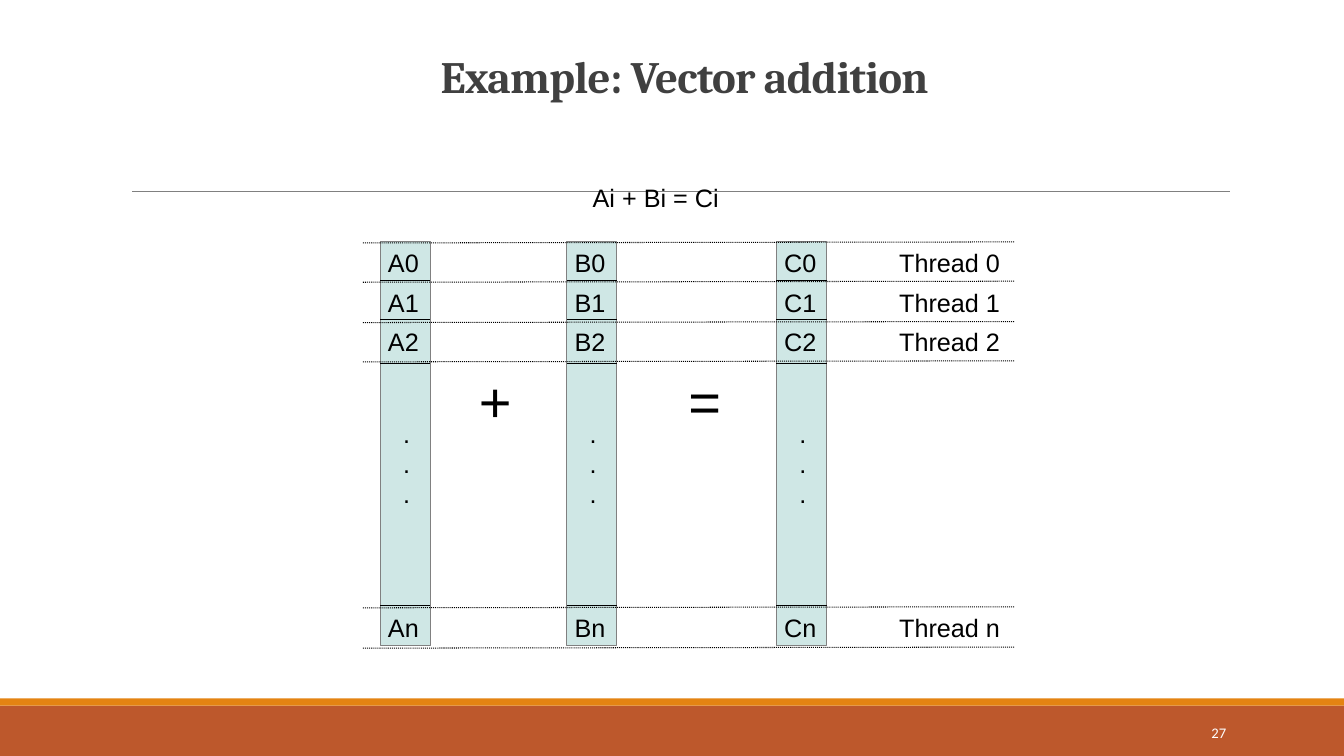
from pptx import Presentation
from pptx.dml.color import RGBColor
from pptx.enum.dml import MSO_LINE
from pptx.enum.shapes import MSO_CONNECTOR, MSO_SHAPE
from pptx.enum.text import MSO_ANCHOR, PP_ALIGN
from pptx.oxml.ns import qn
from pptx.util import Inches, Pt
from lxml import etree

RECT = MSO_SHAPE.RECTANGLE
STRAIGHT = MSO_CONNECTOR.STRAIGHT
DOTTED = MSO_LINE.ROUND_DOT
MIDDLE = MSO_ANCHOR.MIDDLE
LEFT, CENTER, RIGHT = PP_ALIGN.LEFT, PP_ALIGN.CENTER, PP_ALIGN.RIGHT
COLORS = {
    "footer": "BD582C",
    "accent": "E48312",
    "vector": "CFE7E5",
    "gray": "808080",
    "title": "404040",
    "black": "000000",
    "white": "FFFFFF",
}

prs = Presentation()
prs.slide_width, prs.slide_height = Inches(13.33), Inches(7.5)
slide = prs.slides.add_slide(prs.slide_layouts[6])


def add_line(x1, y1, x2, y2, color="black", width=0.75):
    line = slide.shapes.add_connector(
        STRAIGHT, Inches(x1), Inches(y1), Inches(x2), Inches(y2))
    line.line.color.rgb = RGBColor.from_string(COLORS[color])
    line.line.width = Pt(width)
    etree.SubElement(line._element.spPr, qn("a:effectLst"))
    return line


def add_text(text, x, y, w, h, size=18, font="Arial", color="black", align=LEFT):
    """Add an unwrapped text box, one paragraph per line of text."""
    tf = slide.shapes.add_textbox(Inches(x), Inches(y), Inches(w), Inches(h)).text_frame
    tf.word_wrap = False
    tf.text = text
    for p in tf.paragraphs:
        p.alignment = align
        for r in p.runs:
            r.font.size = Pt(size)
            r.font.name = font
            r.font.color.rgb = RGBColor.from_string(COLORS[color])
    return tf


# Footer bands, title and rule
for y, h, color in [(7, 0.5, "footer"), (6.93, 0.07, "accent")]:
    band = slide.shapes.add_shape(RECT, 0, Inches(y), prs.slide_width, Inches(h))
    band.shadow.inherit = False
    band.fill.solid()
    band.fill.fore_color.rgb = RGBColor.from_string(COLORS[color])
    band.line.fill.background()

add_line(1.31, 1.9, 12.2, 1.9, "gray", 0.5)

title = add_text("Example: Vector addition", 2.33, -0.04, 8.92, 1.67,
                 32, "Cambria", "title", CENTER)
title.word_wrap = True
title.vertical_anchor = MIDDLE
p = title.paragraphs[0]
p.line_spacing = 0.85
r = p.runs[0]
r.font.bold = True
r.font._element.set("spc", "-50")

# Vectors A, B and C
rows = [("0", 2.4), ("1", 2.8), ("2", 3.19), ("n", 6.03)]
for name, x in [("A", 3.77), ("B", 5.62), ("C", 7.7)]:
    vector = slide.shapes.add_shape(RECT, Inches(x), Inches(2.4), Inches(0.5), Inches(4))
    vector.shadow.inherit = False
    vector.fill.solid()
    vector.fill.fore_color.rgb = RGBColor.from_string(COLORS["vector"])
    vector.line.color.rgb = RGBColor.from_string(COLORS["gray"])
    vector.line.width = Pt(0.75)
    for y in (2.78, 3.17, 3.61, 6.01):
        add_line(x, y, x + 0.5, y)
    for index, y in rows:
        add_text(name + index, x - 0.02, y, 0.54, 0.4)
    add_text(".\n.\n.", x + 0.13, 4.1, 0.27, 1)

# Operators and formula
for operator, x in [("+", 4.65), ("=", 6.73)]:
    add_text(operator, x, 3.59, 0.52, 0.77, 40)
add_text("Ai + Bi = Ci", 5.78, 1.76, 1.45, 0.4)

# Threads
for y in (2.41, 2.8, 3.2, 3.59, 6.03, 6.43):
    add_line(3.6, y, 10.06, y - 0.01).line.dash_style = DOTTED
for index, y in rows:
    add_text(f"Thread {index}", 8.82, y, 1.2, 0.4)

number = add_text("27", 10.83, 7.07, 1.43, 0.4, 10.5, "Calibri", "white", RIGHT)
number.word_wrap = True
number.vertical_anchor = MIDDLE

prs.save("out.pptx")
